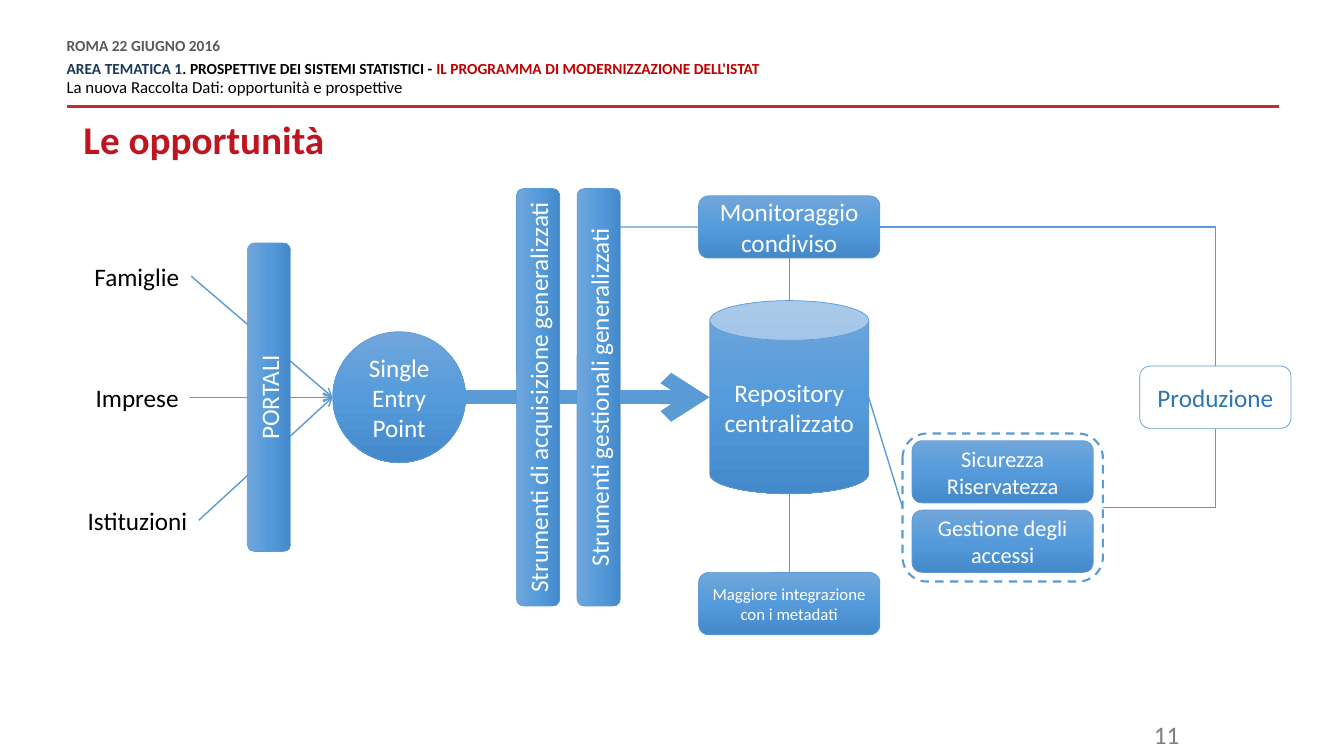
from copy import deepcopy
from dataclasses import dataclass
from lxml import etree
from pptx import Presentation
from pptx import util as u
from pptx.dml.color import RGBColor as Rgb
from pptx.enum import dml, shapes, text as txt
from pptx.oxml.ns import qn


@dataclass(frozen=True)
class Theme:
    font: str = "Calibri"
    blue: str = "5B9BD5"
    deep: str = "2E75B6"
    navy: str = "1C385A"
    red: str = "C00000"
    rule: str = "C72A31"
    head: str = "BE1520"
    gray: str = "595959"
    pale: str = "7F7F7F"
    black: str = "000000"
    white: str = "FFFFFF"
    shade: tuple = ((0, "71A6DB"), (0.5, "559BDB"), (1, "448ACA"))
    title: int = 28
    main: int = 18
    mid: int = 16
    small: int = 12
    tiny: int = 11


look = Theme()
kind = shapes.MSO_SHAPE
side = txt.PP_ALIGN


def write(frame, text, size=look.main, color=look.black, bold=False,
          align=side.LEFT, new=True, lead=None, above=0, below=0):
    for row in text.split("\n"):
        para = frame.paragraphs[-1]
        if new and para.runs:
            para = frame.add_paragraph()
        para.alignment = align
        para.space_before = u.Pt(above)
        para.space_after = u.Pt(below)
        if lead:
            para.line_spacing = u.Pt(lead)
        run = para.add_run()
        run.text = row
        run.font.name = look.font
        run.font.size = u.Pt(size)
        run.font.bold = bold
        run.font.color.rgb = Rgb.from_string(color)


def link(start, end, width=1, color=look.blue, arrow=False, bent=False, tie=None, join=None):
    wire = slide.shapes.add_connector(
        shapes.MSO_CONNECTOR.ELBOW if bent else shapes.MSO_CONNECTOR.STRAIGHT,
        *[u.Cm(n) for n in (*start, *end)])
    wire.line.width = u.Pt(width)
    wire.line.color.rgb = Rgb.from_string(color)
    prop = wire._element.spPr
    if bent:
        prop.find(qn("a:prstGeom")).set("prst", "bentConnector2")
    if arrow:
        etree.SubElement(prop.find(qn("a:ln")), qn("a:tailEnd")).set("type", "arrow")
    etree.SubElement(prop, qn("a:effectLst"))
    if tie:
        wire.begin_connect(*tie)
    if join:
        wire.end_connect(*join)


deck = Presentation()
deck.slide_width, deck.slide_height = u.Cm(33.87), u.Cm(19.05)
slide = deck.slides.add_slide(deck.slide_layouts[5])

title = slide.shapes.title
title.left, title.top, title.width, title.height = [u.Cm(n) for n in (1.85, 2.79, 6.65, 1.45)]
frame = title.text_frame
frame.word_wrap = False
frame.auto_size = txt.MSO_AUTO_SIZE.NONE
frame.vertical_anchor = txt.MSO_ANCHOR.TOP
write(frame, "Le opportunità", look.title, look.head, True)

link((32.23, 2.69), (1.68, 2.69), 2, look.rule)

frame = slide.shapes.add_textbox(*[u.Cm(n) for n in (1.68, 0.99, 21.18, 1.5)]).text_frame
frame.word_wrap = True
frame.margin_left = frame.margin_right = frame.margin_top = frame.margin_bottom = 0
lead = 10.8
write(frame, "ROMA 22 GIUGNO 2016", look.tiny, look.gray, True, lead=lead, below=6)
write(frame, "AREA TEMATICA 1", look.tiny, look.navy, True, lead=lead)
write(frame, ". PROSPETTIVE DEI SISTEMI STATISTICI - ", look.tiny, bold=True, new=False, lead=lead)
write(frame, "IL PROGRAMMA DI MODERNIZZAZIONE DELL'ISTAT", look.tiny, look.red, True, new=False, lead=lead)
write(frame, "La nuova Raccolta Dati: opportunità e prospettive", look.small, lead=lead, above=3, below=6)

frame = slide.shapes.add_textbox(*[u.Cm(n) for n in (22.35, 18.01, 7.62, 1.02)]).text_frame
frame.word_wrap = True
write(frame, "11", color=look.pale, align=side.RIGHT)

axis = 10.01
link((11.73, axis), (17.88, axis), 10, arrow=True)

for name, left, mid, wide in (
    ("Famiglie", 2.13, 6.96, 2.69),
    ("Imprese", 2.16, axis, 2.64),
    ("Istituzioni", 1.96, 13.11, 3.05),
):
    label = slide.shapes.add_textbox(u.Cm(left), u.Cm(mid - 0.51), u.Cm(wide), u.Cm(1.02))
    label.text_frame.word_wrap = False
    label.text_frame.auto_size = txt.MSO_AUTO_SIZE.SHAPE_TO_FIT_TEXT
    write(label.text_frame, name)
    link((left + wide, mid), (8.38, axis), arrow=True, tie=(label, 3))

wide, high = 4.57, 1.57
hub = 19.89
safe = 25.27
round_box = kind.ROUNDED_RECTANGLE
parts = {}
for key, form, x, y, w, h, turn, size, name in (
    ("entry", kind.OVAL, 10.06, axis, 3.35, 3.3, 0, look.main, "Single\nEntry\nPoint"),
    ("portal", round_box, 6.78, axis, 7.77, 1.09, 270, look.main, "PORTALI"),
    ("intake", round_box, 13.56, axis, 10.52, 1.09, 270, look.main,
     "Strumenti di acquisizione generalizzati"),
    ("manage", round_box, 15.09, axis, 10.52, 1.09, 270, look.main,
     "Strumenti gestionali generalizzati"),
    ("store", kind.CAN, hub, axis, 4.01, 4.87, 0, look.main, "Repository\ncentralizzato"),
    ("watch", round_box, hub, 5.72, wide, high, 0, look.main, "Monitoraggio condiviso"),
    ("guard", round_box, safe, 11.89, wide, high, 0, look.mid, "Sicurezza\nRiservatezza"),
    ("access", round_box, safe, 13.64, wide, high, 0, look.mid, "Gestione degli accessi"),
    ("group", round_box, safe, 12.79, 5.05, 3.73, 0, look.main, ""),
    ("output", round_box, 30.63, axis, 3.81, high, 0, look.main, "Produzione"),
    ("meta", round_box, hub, 15.21, wide, high, 0, look.small,
     "Maggiore integrazione con i metadati"),
):
    part = slide.shapes.add_shape(form, *[u.Cm(n) for n in (x - w / 2, y - h / 2, w, h)])
    part.rotation = turn
    part.shadow.inherit = False
    part.line.color.rgb = Rgb.from_string(look.blue)
    part.line.width = u.Pt(0.5)
    if key in ("group", "output"):
        part.fill.background()
    else:
        part.fill.gradient()
        part.fill.gradient_angle = 270
        stops = part._element.spPr.find(qn("a:gradFill")).find(qn("a:gsLst"))
        stops.insert(1, deepcopy(stops[0]))
        for stop, (place, tone) in zip(part.fill.gradient_stops, look.shade):
            stop.position = place
            stop.color.rgb = Rgb.from_string(tone)
    if name:
        part.text_frame.word_wrap = True
        write(part.text_frame, name, size,
              look.deep if key == "output" else look.white, align=side.CENTER)
    parts[key] = part

parts["group"].line.width = u.Pt(1.5)
parts["group"].line.dash_style = dml.MSO_LINE.DASH

link((hub, 7.57), (hub, 6.5), join=(parts["watch"], 2))
link((21.89, axis), (22.74, 12.79), join=(parts["group"], 1))
link((hub, 12.44), (hub, 14.43), join=(parts["meta"], 0))
link((15.63, 5.72), (17.6, 5.72), join=(parts["watch"], 1))
link((22.17, 5.72), (30.63, 9.22), bent=True)
link((27.79, 12.79), (30.63, 10.8), bent=True)

deck.save("out.pptx")
